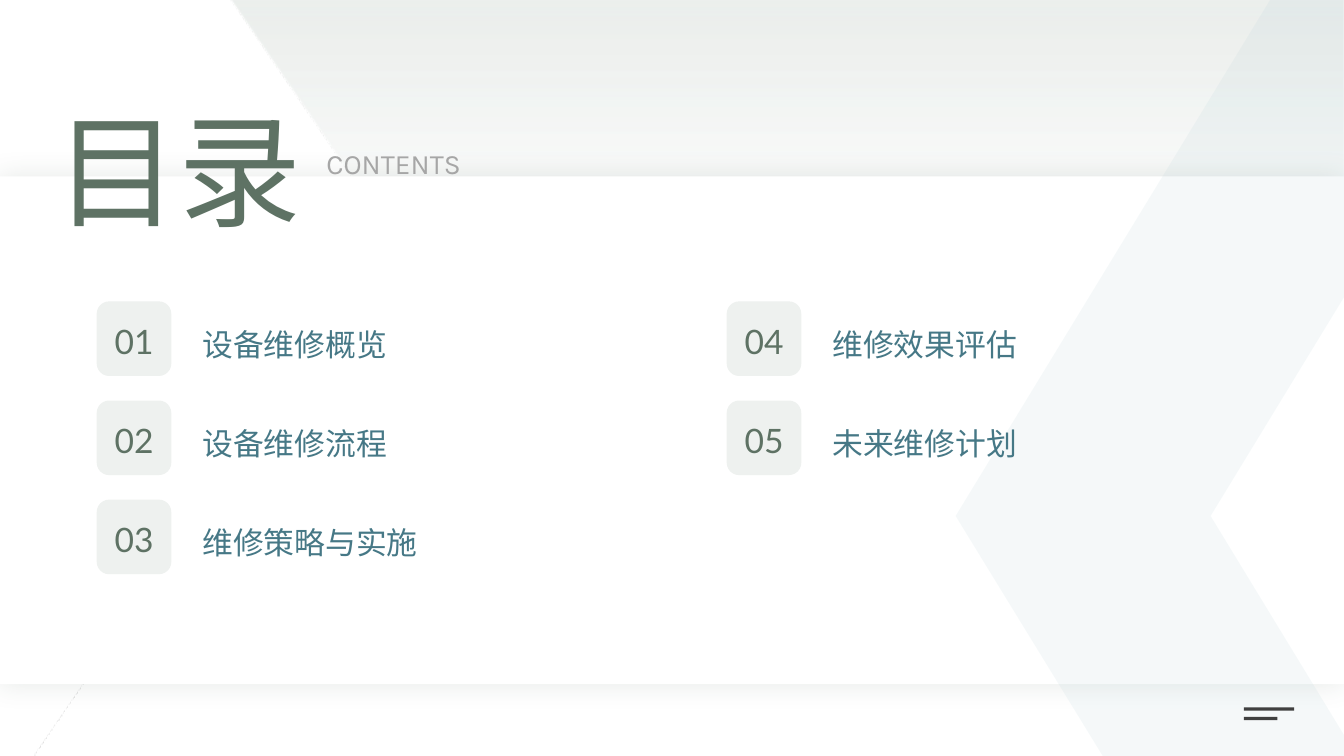
"""Build the contents slide of an equipment maintenance deck."""
from lxml import etree
from pptx import Presentation
from pptx import util as u
from pptx.dml import color
from pptx.enum import shapes, text
from pptx.oxml import ns

GREEN, TEAL, GREY, DARK = "5E7264", "467886", "A6A6A6", "404040"
WHITE, MIST, TILE, SKY = "FFFFFF", "DEE4E0", "EEF1EF", "AFCDD5"
COLUMNS = [["设备维修概览", "设备维修流程", "维修策略与实施"],
           ["维修效果评估", "未来维修计划"]]
LEFT, TOP = 69.1, 215.3
COLUMN_STEP, ROW_STEP, TILE_SIZE = 450, 70.8, 53.3


def rgb(value):
    """Turn a hex string into a colour."""
    return color.RGBColor.from_string(value)


def points(*lengths):
    """Turn numbers into lengths in points."""
    return [u.Pt(length) for length in lengths]


def set_alpha(shape, *percents):
    """Give each colour of the shape its opacity, in order."""
    for tint, percent in zip(shape.element.iter(ns.qn("a:srgbClr")), percents):
        etree.SubElement(tint, ns.qn("a:alpha"), val=str(percent * 1000))


def paint(shape, fill):
    """Give the shape a plain fill without line or shadow."""
    shape.fill.solid()
    shape.fill.fore_color.rgb = rgb(fill)
    shape.line.fill.background()
    shape.shadow.inherit = False


def add_block(page, place, fill, kind=shapes.MSO_SHAPE.RECTANGLE):
    """Add a filled preset shape."""
    block = page.shapes.add_shape(kind, *points(*place))
    paint(block, fill)
    return block


def add_outline(page, corners, fill):
    """Add a filled polygon through the corners."""
    first, *others = [points(*corner) for corner in corners]
    builder = page.shapes.build_freeform(*first, scale=1.0)
    builder.add_line_segments(others, close=True)
    outline = builder.convert_to_shape()
    paint(outline, fill)
    return outline


def add_glow(shape, tint, percent, blur):
    """Put a soft even shadow around the shape."""
    effects = shape.element.spPr.find(ns.qn("a:effectLst"))
    glow = etree.SubElement(effects, ns.qn("a:outerShdw"), blurRad=str(u.Pt(blur)),
                            dist="0", algn="ctr", rotWithShape="0")
    shade = etree.SubElement(glow, ns.qn("a:srgbClr"), val=tint)
    etree.SubElement(shade, ns.qn("a:alpha"), val=str(percent * 1000))


def write(shape, words, size, tint, spacing, font="Lato",
          align=text.PP_ALIGN.LEFT, anchor=text.MSO_ANCHOR.MIDDLE):
    """Write one formatted line in the shape."""
    frame = shape.text_frame
    frame.word_wrap = True
    frame.auto_size = text.MSO_AUTO_SIZE.NONE
    frame.vertical_anchor = anchor
    para = frame.paragraphs[0]
    para.alignment = align
    para.line_spacing = spacing
    span = para.add_run()
    span.text = words
    span.font.name = font
    span.font.size = u.Pt(size)
    span.font.color.rgb = rgb(tint)
    etree.SubElement(span.font._element, ns.qn("a:ea"), typeface=font)


def add_label(page, place, words, size, tint, spacing, **options):
    """Add a text box with one line."""
    box = page.shapes.add_textbox(*points(*place))
    write(box, words, size, tint, spacing, **options)


def add_background(page):
    """Draw the shaded top, the white band and the chevron."""
    shade = add_outline(page, [(960, 0), (165.6, 0), (280.8, 168.5), (25.9, 540),
                               (8.6, 540), (960, 540)], MIST)
    shade.fill.gradient()
    shade.fill.gradient_angle = 270
    for stop, tint, position in zip(shade.fill.gradient_stops, (MIST, WHITE), (0, 0.3)):
        stop.color.rgb = rgb(tint)
        stop.position = position
    set_alpha(shade, 60, 80)
    band = add_block(page, (0, 126, 960, 362.7), WHITE)
    add_glow(band, GREEN, 15, 20)
    chevron = add_outline(page, [(1089.4, 0), (907.2, 0), (682.6, 368.6), (787.7, 540),
                                 (969.1, 540), (864.7, 368.6)], SKY)
    set_alpha(chevron, 12)


def add_heading(page):
    """Place the title in front and its subtitle beside it."""
    title = page.shapes.title
    title.left, title.top, title.width, title.height = points(32.4, 53.3, 193, 121)
    write(title, "目录", 88, GREEN, 1.1, anchor=text.MSO_ANCHOR.TOP)
    title.element.getparent().append(title.element)
    add_label(page, (226.1, 92.9, 160.6, 37.4), "CONTENTS", 20, GREY, 1.35,
              font="Karla", anchor=text.MSO_ANCHOR.TOP)


def add_entry(page, left, top, number, words):
    """Add a numbered tile and its chapter name."""
    tile = add_block(page, (left, top, TILE_SIZE, TILE_SIZE), TILE,
                     shapes.MSO_SHAPE.ROUNDED_RECTANGLE)
    write(tile, f"{number:02}", 24, GREEN, 1.1, align=text.PP_ALIGN.CENTER)
    add_label(page, (left + 68.4, top - 3.9, 319, 61.2), words, 22, TEAL, 1.3)


def main():
    """Build and save the deck."""
    deck = Presentation()
    deck.slide_width, deck.slide_height = points(960, 540)
    page = deck.slides.add_slide(deck.slide_layouts[5])
    add_background(page)
    add_heading(page)
    number = 0
    for column, chapters in enumerate(COLUMNS):
        for row, words in enumerate(chapters):
            number += 1
            add_entry(page, LEFT + column * COLUMN_STEP, TOP + row * ROW_STEP,
                      number, words)
    for top, width in ((505.3, 36), (512.1, 24)):
        add_block(page, (888.5, top, width, 2.3), DARK)
    deck.save("out.pptx")


if __name__ == "__main__":
    main()
